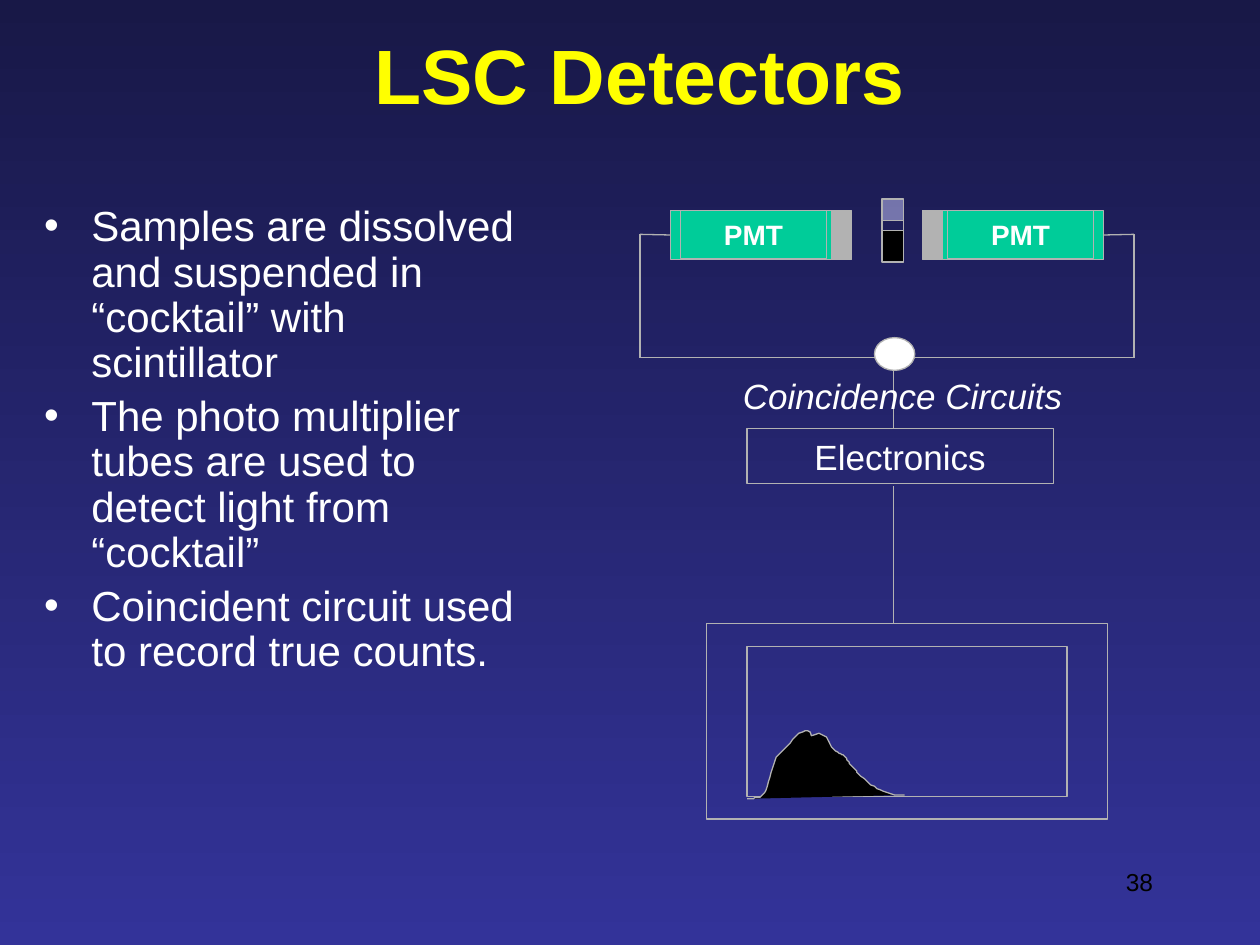
import lxml.etree
import pptx
import pptx.dml.color
import pptx.enum.dml
import pptx.enum.shapes
import pptx.enum.text
import pptx.oxml.ns
import pptx.util

RGBColor = pptx.dml.color.RGBColor
SHAPE = pptx.enum.shapes.MSO_SHAPE
ALIGN = pptx.enum.text.PP_ALIGN
ANCHOR = pptx.enum.text.MSO_ANCHOR
qn = pptx.oxml.ns.qn
Pt = pptx.util.Pt

NAVY = RGBColor(0x18, 0x18, 0x47)
INDIGO = RGBColor(0x33, 0x33, 0x99)
YELLOW = RGBColor(0xFF, 0xFF, 0x00)
WHITE = RGBColor(0xFF, 0xFF, 0xFF)
BLACK = RGBColor(0x00, 0x00, 0x00)
GREEN = RGBColor(0x00, 0xCC, 0x99)
GREY = RGBColor(0xB2, 0xB2, 0xB2)
LAVENDER = RGBColor(0xCC, 0xCC, 0xFF)

PX = 9144  # 100 px to the inch

deck = pptx.Presentation()
deck.slide_width, deck.slide_height = 1000 * PX, 750 * PX
page = deck.slides.add_slide(deck.slide_layouts[1])


def write(shape, lines, color, align, anchor, **formats):
    """Fill a shape with paragraphs that share one format."""
    frame = shape.text_frame
    frame.word_wrap = True
    frame.auto_size = pptx.enum.text.MSO_AUTO_SIZE.NONE
    frame.vertical_anchor = anchor
    frame.text = "\n".join(lines)
    for para in frame.paragraphs:
        para.alignment = align
        para.font.color.rgb = color
        for name, value in {"name": "Arial", **formats}.items():
            setattr(para.font, name, value)


def block(left, top, width, height, fill=None, kind=SHAPE.RECTANGLE):
    """Add a grey-edged shape, hollow unless a fill is given."""
    shape = page.shapes.add_shape(kind, left * PX, top * PX, width * PX, height * PX)
    shape.shadow.inherit = False
    shape.line.color.rgb = GREY
    shape.line.width = Pt(0.75)
    if fill is None:
        shape.fill.background()
    else:
        shape.fill.solid()
        shape.fill.fore_color.rgb = fill
    return shape


# Background gradient, top to bottom
background = page.background.fill
background.gradient()
background.gradient_angle = 270
for stop, color, position in zip(background.gradient_stops, (NAVY, INDIGO), (0, 1)):
    stop.color.rgb = color
    stop.position = position

# Title and bullet list
title, body = page.placeholders
for holder, place in ((title, (83, 25, 850, 67)), (body, (25, 158, 409, 533))):
    holder.left, holder.top, holder.width, holder.height = [n * PX for n in place]
write(title, ["LSC Detectors"], YELLOW, ALIGN.CENTER, ANCHOR.MIDDLE, size=Pt(44), bold=True)
points = [
    "Samples are dissolved and suspended in “cocktail” with scintillator",
    "The photo multiplier tubes are used to detect light from “cocktail”",
    "Coincident circuit used to record true counts.",
]
write(body, points, WHITE, ALIGN.LEFT, ANCHOR.TOP, size=Pt(24))
for number, para in enumerate(body.text_frame.paragraphs):
    para.line_spacing = 0.9
    para.space_before = Pt(4.8 if number else 0)

# Photomultiplier tubes with their windows
left_tube, right_tube = [block(left, 167, 128, 39, GREEN) for left in (532, 748)]
for left in (660, 732):
    block(left, 167, 16, 39, GREY)

# Wiring from the tubes through the circuit to the display
wires = [
    (532, 186, 508, 186, left_tube, 1),
    (876, 186, 900, 186, right_tube, 3),
    (508, 186, 508, 284, None, None),
    (900, 186, 900, 284, None, None),
    (508, 284, 900, 284, None, None),
    (709, 294, 709, 340, None, None),
    (709, 386, 709, 495, None, None),
]
for x1, y1, x2, y2, tube, side in wires:
    wire = page.shapes.add_connector(
        pptx.enum.shapes.MSO_CONNECTOR.STRAIGHT, x1 * PX, y1 * PX, x2 * PX, y2 * PX)
    wire.line.color.rgb = GREY
    wire.line.width = Pt(0.75)
    lxml.etree.SubElement(wire._element.spPr, qn("a:effectLst"))
    if tube is not None:
        wire.begin_connect(tube, side)

# Coincidence node, electronics and display
block(694, 268, 32, 26, WHITE, SHAPE.OVAL)
electronics = block(593, 340, 243, 44)
write(electronics, ["Electronics"], WHITE, ALIGN.CENTER, ANCHOR.MIDDLE, size=Pt(20))
block(561, 495, 318, 155)
block(593, 513, 254, 119)

# Spectrum: cubic curves, each given by two handles and an end point
curves = [
    ((596, 633), (600, 634), (603, 633)),
    ((612, 628), (610, 606), (618, 599)),
    ((624, 594), (640, 570), (644, 584)),
    ((659, 577), (657, 595), (665, 597)),
    ((670, 600), (670, 599), (673, 604)),
    ((675, 607), (680, 613), (683, 616)),
    ((696, 626), (700, 631), (718, 631)),
]
STEPS = 12
start = (593, 634)
outline = page.shapes.build_freeform(*start, scale=PX)
for first, second, end in curves:
    vertices = []
    for step in range(1, STEPS + 1):
        t = step / STEPS
        weights = ((1 - t) ** 3, 3 * t * (1 - t) ** 2, 3 * t ** 2 * (1 - t), t ** 3)
        corners = (start, first, second, end)
        vertices.append([sum(w * c[axis] for w, c in zip(weights, corners)) for axis in (0, 1)])
    outline.add_line_segments(vertices, close=False)
    start = end
spectrum = outline.convert_to_shape()
spectrum.shadow.inherit = False
spectrum.fill.solid()
spectrum.fill.fore_color.rgb = BLACK
spectrum.line.color.rgb = GREY
spectrum.line.width = Pt(0.75)

# Tube labels
for left in (540, 752):
    label = block(left, 167, 116, 38)
    write(label, ["PMT"], WHITE, ALIGN.CENTER, ANCHOR.MIDDLE, size=Pt(16), bold=True)

# Sample vial: liquid, half-transparent cap, neck
block(700, 183, 17, 25, BLACK)
cap = block(700, 158, 17, 17, LAVENDER)
tint = cap._element.spPr.find(qn("a:solidFill"))[0]
lxml.etree.SubElement(tint, qn("a:alpha"), val="50000")
block(700, 175, 17, 8)

# Circuit caption and page number
caption = page.shapes.add_textbox(575 * PX, 292 * PX, 283 * PX, 43 * PX)
write(caption, ["Coincidence Circuits"], WHITE, ALIGN.CENTER, ANCHOR.TOP, size=Pt(20), italic=True)
page_number = page.shapes.add_textbox(717 * PX, 683 * PX, 208 * PX, 50 * PX)
write(page_number, ["38"], BLACK, ALIGN.RIGHT, ANCHOR.TOP, size=Pt(14))

deck.save("out.pptx")
